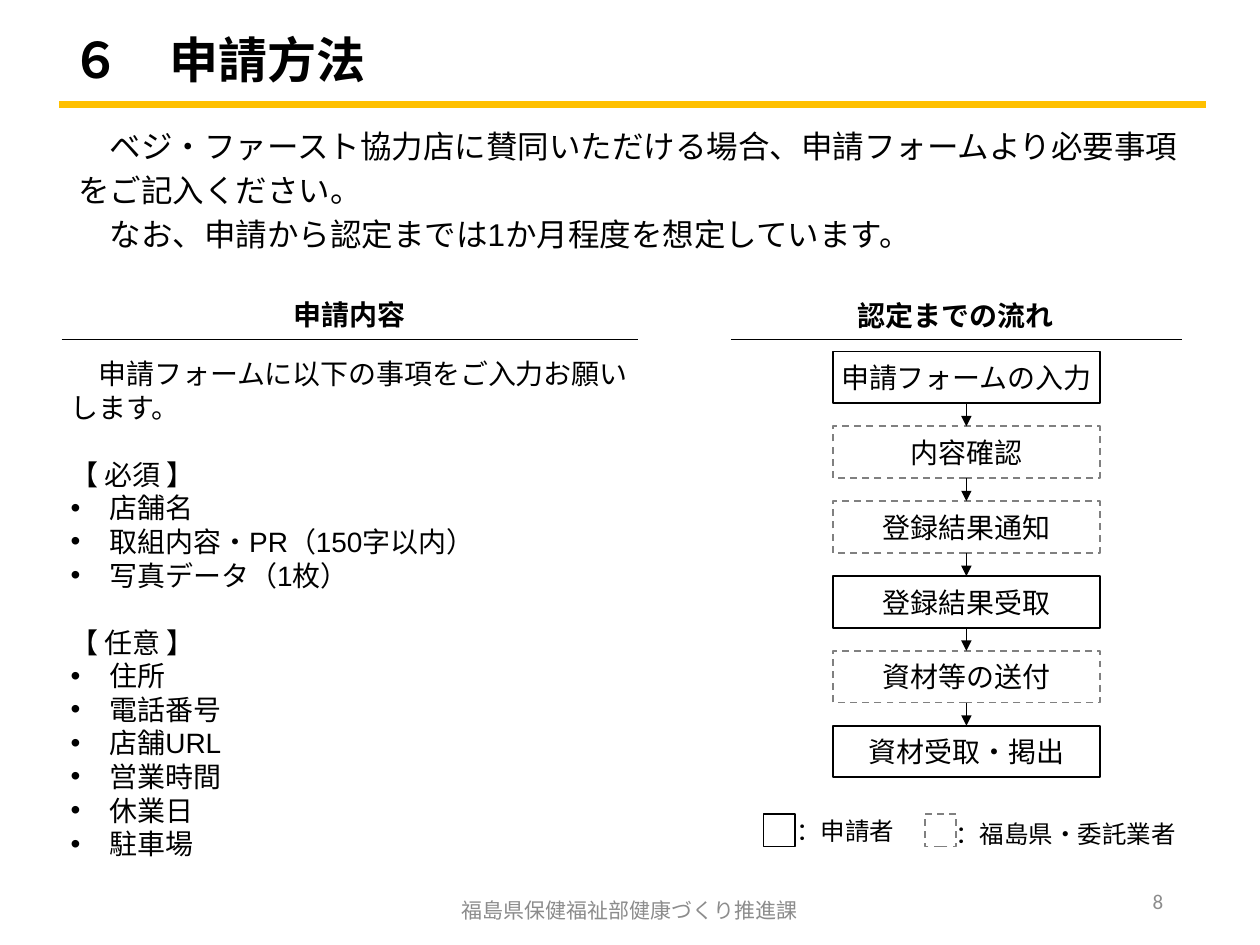
"""Build the application-method slide with its entry list and approval flow."""
from lxml import etree
from pptx import Presentation
from pptx import util as u
from pptx.dml.color import RGBColor
from pptx.enum import dml, shapes, text
from pptx.oxml.ns import qn

COLORS = {"ink": "000000", "muted": "808080", "footer": "8C8C8C", "accent": "FFC000"}
TITLE = "６　申請方法"
INTRO = [
    "　ベジ・ファースト協力店に賛同いただける場合、申請フォームより必要事項",
    "をご記入ください。",
    "　なお、申請から認定までは1か月程度を想定しています。",
]
ENTRY_LEAD = "　申請フォームに以下の事項をご入力お願いします。"
ENTRIES = {
    "【 必須 】": ["店舗名", "取組内容・PR（150字以内）", "写真データ（1枚）"],
    "【 任意 】": ["住所", "電話番号", "店舗URL", "営業時間", "休業日", "駐車場"],
}
HEADINGS = [
    ("申請内容", (1.07, 2.31, 3.41, 0.35), (0.49, 5.06)),
    ("認定までの流れ", (6.25, 2.32, 2.67, 0.35), (5.8, 9.38)),
]
FLOW = [
    ("申請フォームの入力", "applicant"),
    ("内容確認", "office"),
    ("登録結果通知", "office"),
    ("登録結果受取", "applicant"),
    ("資材等の送付", "office"),
    ("資材受取・掲出", "applicant"),
]
LEGEND = [
    ("applicant", 6.06, "：申請者", (6.28, 6.46, 1.01, 0.26)),
    ("office", 7.34, "：福島県・委託業者", (7.54, 6.46, 1.9, 0.31)),
]
FOOTERS = [
    ("福島県保健福祉部健康づくり推進課", (3.31, 7.02, 3.38, 0.4), "CENTER"),
    ("8", (7.08, 6.95, 2.25, 0.4), "RIGHT"),
]
OUTLINES = {
    "applicant": {"color": "ink", "dash": None},
    "office": {"color": "muted", "dash": dml.MSO_LINE.DASH},
}
RULE_Y = 2.69
FLOW_X, FLOW_TOP, FLOW_LAST, BOX_W, BOX_H = 6.61, 2.79, 5.76, 2.12, 0.41
INDENT = 0.31
BLANK_LINE = 19.2
FRAMED = (0.04, 0.04, 0.04, 0.04)
SIDELESS = (0, 0.05, 0, 0.05)


def rgb(name):
    return RGBColor.from_string(COLORS[name])


def apply(obj, values):
    for name, value in values.items():
        setattr(obj, name, value)


def place(sp, box):
    apply(sp, dict(zip(("left", "top", "width", "height"), map(u.Inches, box))))


def frame(tf, insets=(0.1, 0.05, 0.1, 0.05), anchor="TOP"):
    sides = ("margin_left", "margin_top", "margin_right", "margin_bottom")
    apply(tf, dict(zip(sides, map(u.Inches, insets))))
    apply(tf, {
        "word_wrap": True,
        "auto_size": text.MSO_AUTO_SIZE.NONE,
        "vertical_anchor": text.MSO_ANCHOR[anchor],
    })


def write(tf, lines, size, face="Arial", color="ink", bold=False, align="LEFT", gap=0):
    for i, line in enumerate(lines):
        p = tf.add_paragraph() if i else tf.paragraphs[0]
        apply(p, {"alignment": text.PP_ALIGN[align], "space_before": u.Pt(gap if i else 0)})
        r = p.add_run()
        r.text = line
        apply(r.font, {"size": u.Pt(size), "name": face, "bold": bold})
        r.font.color.rgb = rgb(color)


def label(s, lines, box, size, insets=(0.1, 0.05, 0.1, 0.05), anchor="TOP", **style):
    tf = s.shapes.add_textbox(*map(u.Inches, box)).text_frame
    frame(tf, insets, anchor)
    write(tf, lines, size, **style)


def rule(s, start, end, width, color="ink", arrow=False):
    ends = map(u.Inches, (*start, *end))
    sp = s.shapes.add_connector(shapes.MSO_CONNECTOR.STRAIGHT, *ends)
    sp.line.width = u.Pt(width)
    sp.line.color.rgb = rgb(color)
    if arrow:
        etree.SubElement(sp.line._get_or_add_ln(), qn("a:tailEnd"), type="triangle")
    etree.SubElement(sp._element.spPr, qn("a:effectLst"))


def outlined(s, box, owner):
    sp = s.shapes.add_shape(shapes.MSO_SHAPE.RECTANGLE, *map(u.Inches, box))
    sp.shadow.inherit = False
    sp.fill.background()
    sp.line.width = u.Pt(1)
    sp.line.color.rgb = rgb(OUTLINES[owner]["color"])
    sp.line.dash_style = OUTLINES[owner]["dash"]
    return sp


def add_title(s):
    sp = s.shapes.title
    place(sp, (0.47, 0.03, 9.05, 0.94))
    frame(sp.text_frame, anchor="MIDDLE")
    write(sp.text_frame, [TITLE], 28, bold=True)
    sp.text_frame.paragraphs[0].line_spacing = 0.9
    rule(s, (0.47, 0.83), (9.57, 0.83), 4, "accent")


def add_entries(s):
    sp = s.placeholders[1]
    place(sp, (0.56, 2.78, 4.58, 4.17))
    tf = sp.text_frame
    frame(tf, SIDELESS)
    lines = [ENTRY_LEAD]
    for group, items in ENTRIES.items():
        lines += [group, *items]
    write(tf, lines, 16)
    for p, line in zip(tf.paragraphs, lines):
        pPr = p._p.get_or_add_pPr()
        bulleted = line != ENTRY_LEAD and line not in ENTRIES
        indent = u.Inches(INDENT) if bulleted else 0
        pPr.set("marL", str(indent))
        pPr.set("indent", str(-indent))
        if bulleted:
            etree.SubElement(pPr, qn("a:buFont"), typeface="Arial")
            etree.SubElement(pPr, qn("a:buChar"), char="•")
        else:
            etree.SubElement(pPr, qn("a:buNone"))
        if line in ENTRIES:
            p.space_before = u.Pt(BLANK_LINE)


def add_flow(s):
    step = (FLOW_LAST - FLOW_TOP) / (len(FLOW) - 1)
    center = FLOW_X + BOX_W / 2
    for i, (name, owner) in enumerate(FLOW):
        top = FLOW_TOP + i * step
        tf = outlined(s, (FLOW_X, top, BOX_W, BOX_H), owner).text_frame
        frame(tf, FRAMED, "MIDDLE")
        write(tf, [name], 16, "Calibri", align="CENTER")
        if i:
            rule(s, (center, top - step + BOX_H), (center, top), 1, arrow=True)


def main():
    prs = Presentation()
    prs.slide_width, prs.slide_height = u.Inches(10), u.Inches(7.5)
    s = prs.slides.add_slide(prs.slide_layouts[1])
    add_title(s)
    label(s, INTRO, (0.62, 1.01, 8.95, 1.2), 18, (0, 0, 0, 0), gap=3.6)
    for name, box, (left, right) in HEADINGS:
        label(s, [name], box, 16, SIDELESS, bold=True, align="CENTER")
        rule(s, (left, RULE_Y), (right, RULE_Y), 0.25)
    add_entries(s)
    add_flow(s)
    for owner, left, name, box in LEGEND:
        outlined(s, (left, 6.46, 0.25, 0.26), owner)
        label(s, [name], box, 14, FRAMED, "MIDDLE", face="Calibri")
    for line, box, align in FOOTERS:
        label(s, [line], box, 12, anchor="MIDDLE", face="Calibri", color="footer", align=align)
    prs.save("out.pptx")


if __name__ == "__main__":
    main()
